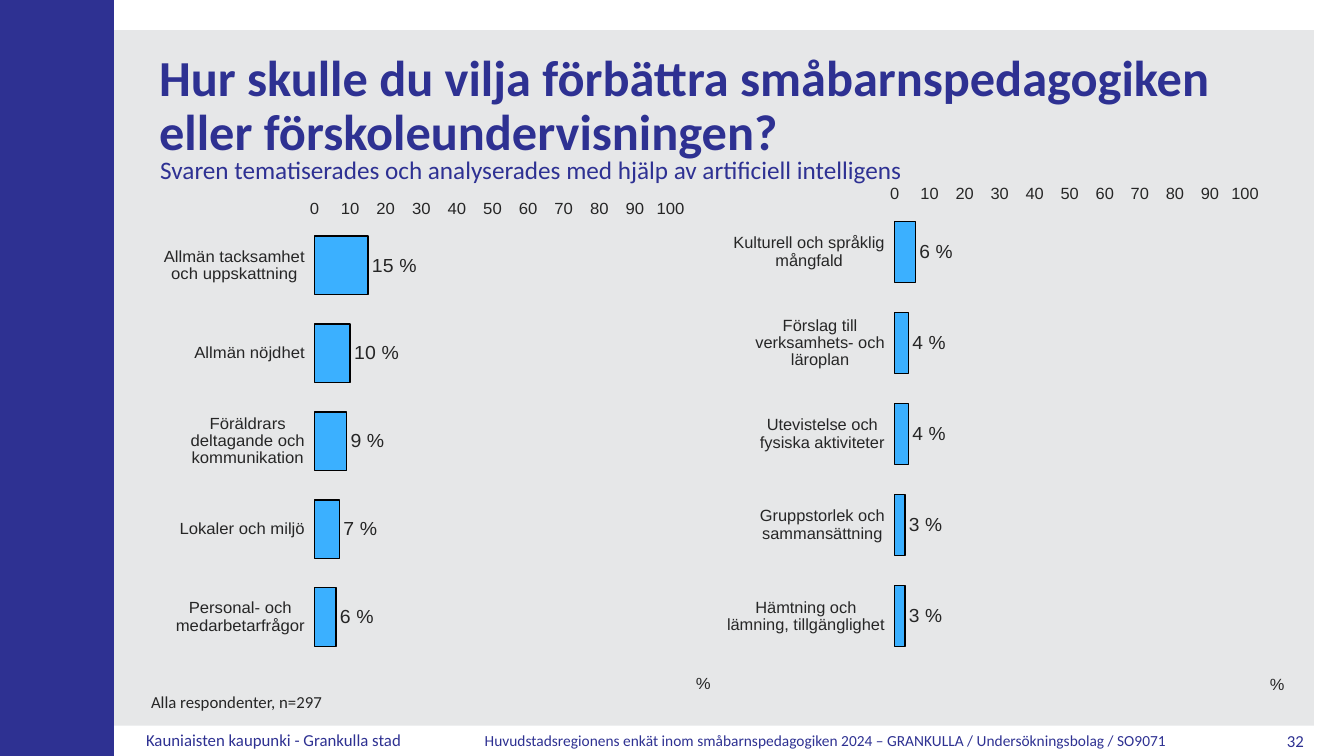
"""Builds a survey slide with two bar charts of themes in percent."""
from lxml.etree import SubElement
from pptx import Presentation
from pptx.chart.data import CategoryChartData
from pptx.dml.color import RGBColor
from pptx.enum.chart import XL_AXIS_CROSSES as CROSS, XL_CHART_TYPE as CT
from pptx.enum.chart import XL_LABEL_POSITION as LP, XL_TICK_LABEL_POSITION as TLP
from pptx.enum.chart import XL_TICK_MARK as TM
from pptx.enum.shapes import MSO_SHAPE
from pptx.enum.text import MSO_ANCHOR as MA, PP_ALIGN as PA
from pptx.oxml.ns import qn
from pptx.util import Inches, Pt

C = {"navy": "2E3192", "sub": "2E3193", "grey": "E6E7E8", "text": "262626",
     "bar": "3BB0FF", "edge": "000000"}

prs = Presentation()
prs.slide_width, prs.slide_height = Inches(13.33), Inches(7.5)
s = prs.slides.add_slide(prs.slide_layouts[6])


def share(x, y, w, h):
    """Turn percentages of the slide into lengths."""
    sides = (prs.slide_width, prs.slide_height) * 2
    return [int(side * v / 100) for side, v in zip(sides, (x, y, w, h))]


def set_layout(parent, index, **values):
    """Place a chart part by shares of the chart."""
    for old in parent.findall(qn("c:layout")):
        parent.remove(old)
    layout = SubElement(parent, qn("c:layout"))
    parent.insert(index, layout)
    manual = SubElement(layout, qn("c:manualLayout"))
    for tag, val in values.items():
        SubElement(manual, qn("c:" + tag)).set("val", str(val))


for box, color in [((2.25, 4, 95.5, 92), "grey"), ((0, 0, 8.48, 100), "navy")]:
    sp = s.shapes.add_shape(MSO_SHAPE.RECTANGLE, *share(*box))
    sp.shadow.inherit = False
    sp.fill.solid()
    sp.fill.fore_color.rgb = RGBColor.from_string(C[color])
    sp.line.fill.background()

texts = [
    ((10.13, 96.4, 21.6, 3.73), "Kauniaisten kaupunki - Grankulla stad",
     12, "navy", 0.8, MA.TOP, PA.LEFT, False),
    ((35.33, 96.27, 52.89, 3.73),
     "Huvudstadsregionens enkät inom småbarnspedagogiken 2024 – GRANKULLA / Undersökningsbolag / SO9071",
     11, "navy", 0.9, MA.TOP, PA.LEFT, False),
    ((11.1, 6.93, 86.27, 14.53),
     "Hur skulle du vilja förbättra småbarnspedagogiken eller förskoleundervisningen?",
     36, "navy", 0.9, MA.MIDDLE, PA.LEFT, True),
    ((10.5, 91.2, 68.87, 3.73), "Alla respondenter, n=297",
     12, "text", 0.9, MA.TOP, PA.LEFT, False),
    ((92.2, 96, 5.55, 4), "32", 12, "navy", 1.0, MA.MIDDLE, PA.RIGHT, False),
    ((11.18, 19.73, 76.37, 5.33),
     "Svaren tematiserades och analyserades med hjälp av artificiell intelligens",
     18, "sub", 1.0, MA.TOP, PA.LEFT, False),
]
for box, text, size, color, spacing, anchor, align, bold in texts:
    tf = s.shapes.add_textbox(*share(*box)).text_frame
    tf.word_wrap = True
    tf.vertical_anchor = anchor
    p = tf.paragraphs[0]
    p.alignment, p.line_spacing = align, spacing
    r = p.add_run()
    r.text = text
    r.font.name, r.font.size, r.font.bold = "Calibri", Pt(size), bold
    r.font.color.rgb = RGBColor.from_string(C[color])

charts = [
    ((11.4, 26.53, 41.71, 65.73), {
        "Allmän tacksamhet och uppskattning": 15,
        "Allmän nöjdhet": 10,
        "Föräldrars deltagande och kommunikation": 9,
        "Lokaler och miljö": 7,
        "Personal- och medarbetarfrågor": 6}),
    ((54.09, 24.53, 41.71, 67.87), {
        "Kulturell och språklig mångfald": 6,
        "Förslag till verksamhets- och läroplan": 4,
        "Utevistelse och fysiska aktiviteter": 4,
        "Gruppstorlek och sammansättning": 3,
        "Hämtning och lämning, tillgänglighet": 3}),
]
for box, themes in charts:
    data = CategoryChartData()
    data.categories = list(themes)
    data.add_series("Series 1", list(themes.values()))
    chart = s.shapes.add_chart(CT.BAR_CLUSTERED, *share(*box), data).chart
    chart.has_legend = chart.has_title = False
    chart.font.name, chart.font.size = "Arial", Pt(14)
    chart.font.color.rgb = RGBColor.from_string(C["text"])
    set_layout(chart._chartSpace.chart.plotArea, 0, layoutTarget="inner",
               xMode="edge", yMode="edge", x=0.29, y=0.01, w=0.64, h=0.92)

    cat, val = chart.category_axis, chart.value_axis
    for axis in (cat, val):
        axis.has_major_gridlines = False
        axis.major_tick_mark = axis.minor_tick_mark = TM.NONE
        axis.format.line.fill.background()
        axis.tick_labels.font.size = Pt(12)
    cat.reverse_order = True
    cat.crosses = CROSS.MAXIMUM
    cat.tick_label_position = TLP.LOW
    val.minimum_scale, val.maximum_scale, val.major_unit = 0, 100, 10
    val.tick_labels.number_format = "General"
    val.tick_labels.number_format_is_linked = False
    r = val.axis_title.text_frame.paragraphs[0].add_run()
    r.text = "%"
    r.font.size, r.font.bold = Pt(12), False
    r.font.color.rgb = RGBColor.from_string(C["text"])
    set_layout(val.axis_title._element, 1, xMode="edge", yMode="edge", x=0.97, y=0.95)

    plot = chart.plots[0]
    plot.gap_width, plot.vary_by_categories = 50, False
    bars = plot.series[0]
    bars.format.fill.solid()
    bars.format.fill.fore_color.rgb = RGBColor.from_string(C["bar"])
    bars.format.line.color.rgb = RGBColor.from_string(C["edge"])
    bars.format.line.width = Pt(1)
    labels = bars.data_labels
    labels.show_value, labels.position = True, LP.OUTSIDE_END
    labels.number_format, labels.number_format_is_linked = "#,##0\\ [$%]", False

prs.save("out.pptx")
